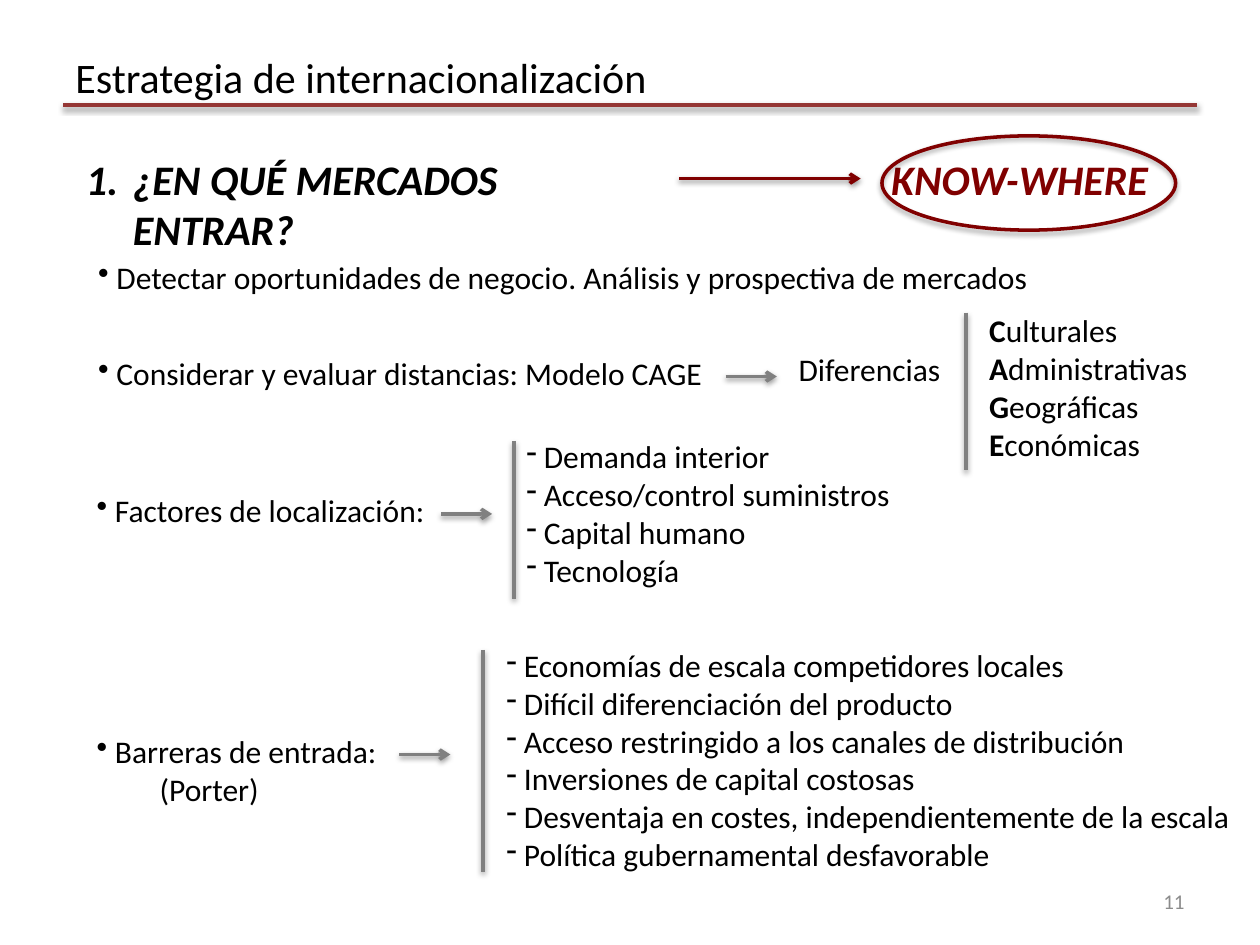
from pptx import Presentation
from pptx.dml.color import RGBColor
from pptx.enum.shapes import MSO_CONNECTOR, MSO_SHAPE
from pptx.enum.text import MSO_ANCHOR, PP_ALIGN
from pptx.oxml import parse_xml
from pptx.oxml.ns import nsdecls
from pptx.util import Cm, Pt

BLACK = RGBColor(0x00, 0x00, 0x00)
GREY = RGBColor(0x80, 0x80, 0x80)
PAGE_GREY = RGBColor(0x8C, 0x8C, 0x8C)
BRICK = RGBColor(0x95, 0x37, 0x35)
MAROON = RGBColor(0x80, 0x00, 0x00)
FONT = "Calibri"
ARROW_LENGTH = 1.03
ARROW_DROP = 0.58


def add_shadow(shape, opacity):
    shape._element.spPr.append(parse_xml(
        f'<a:effectLst {nsdecls("a")}>'
        '<a:outerShdw blurRad="39370" dist="20320" dir="5400000" rotWithShape="0">'
        f'<a:srgbClr val="000000"><a:alpha val="{opacity * 1000}"/></a:srgbClr>'
        '</a:outerShdw></a:effectLst>'))


def add_line(slide, x1, y1, x2, y2, color, arrow=False):
    line = slide.shapes.add_connector(
        MSO_CONNECTOR.STRAIGHT, Cm(x1), Cm(y1), Cm(x2), Cm(y2))
    line.line.color.rgb = color
    line.line.width = Pt(2)
    if arrow:
        line.line._get_or_add_ln().append(
            parse_xml(f'<a:tailEnd {nsdecls("a")} type="arrow"/>'))
    add_shadow(line, 38)


def add_text_box(slide, left, top, width, height, anchor=MSO_ANCHOR.TOP):
    frame = slide.shapes.add_textbox(
        Cm(left), Cm(top), Cm(width), Cm(height)).text_frame
    frame.word_wrap = True
    frame.vertical_anchor = anchor
    return frame


def add_run(paragraph, text, size=18, color=BLACK, bold=False, italic=False):
    run = paragraph.add_run()
    run.text = text
    font = run.font
    font.name, font.size, font.color.rgb = FONT, Pt(size), color
    font.bold, font.italic = bold, italic


def paragraphs(frame, count):
    """Yield the frame's first paragraph, then new ones up to count."""
    yield frame.paragraphs[0]
    for _ in range(count - 1):
        yield frame.add_paragraph()


def set_bullet(paragraph, char):
    paragraph._p.get_or_add_pPr().append(
        parse_xml(f'<a:buChar {nsdecls("a")} char="{char}"/>'))


def add_bullets(slide, left, top, width, height, char, items):
    frame = add_text_box(slide, left, top, width, height)
    for paragraph, item in zip(paragraphs(frame, len(items)), items):
        set_bullet(paragraph, char)
        add_run(paragraph, " " + item)
    return frame


def header(slide, left, top, width, height):
    add_line(slide, left, top + 1.36, left + width, top + 1.36, BRICK)
    title = add_text_box(slide, left, top, width, height, MSO_ANCHOR.MIDDLE)
    add_run(title.paragraphs[0], "Estrategia de internacionalización", 24)


def question(slide, left, top, width, height):
    """Numbered question on the left, arrow to its circled answer on the right."""
    asked = add_text_box(slide, left, top + 0.23, 12.19, 1.27).paragraphs[0]
    properties = asked._p.get_or_add_pPr()
    properties.set("marL", str(Cm(0.95)))
    properties.set("indent", str(Cm(-0.95)))
    properties.append(
        parse_xml(f'<a:buAutoNum {nsdecls("a")} type="arabicPeriod"/>'))
    add_run(asked, "¿EN QUÉ MERCADOS ENTRAR?", 24, bold=True, italic=True)

    oval_width = 5.92
    oval_left = left + width - oval_width
    answer = add_text_box(slide, oval_left - 0.84, top + 0.23, 7.42, 1.27).paragraphs[0]
    answer.alignment = PP_ALIGN.CENTER
    add_run(answer, "KNOW-WHERE ", 24, MAROON, bold=True, italic=True)
    oval = slide.shapes.add_shape(
        MSO_SHAPE.OVAL, Cm(oval_left), Cm(top), Cm(oval_width), Cm(height))
    oval.fill.background()
    oval.line.color.rgb = MAROON
    oval.line.width = Pt(2)
    add_shadow(oval, 35)
    add_line(slide, oval_left - 4.09, top + 0.86, oval_left - 0.43, top + 0.86,
             MAROON, arrow=True)


def pointed_topic(slide, left, top, width, topic, arrow_offset):
    """Bulleted topic followed by a short arrow on its first line."""
    frame = add_bullets(slide, left, top, width, 1.02, "•", [topic])
    start, y = left + arrow_offset, top + ARROW_DROP
    add_line(slide, start, y, start + ARROW_LENGTH, y, GREY, arrow=True)
    return frame


def cage_distances(slide, left, top, width, height):
    pointed_topic(slide, left, top + 0.86, 12.88,
                  "Considerar y evaluar distancias: Modelo CAGE", 12.9)
    differences = add_text_box(slide, left + 14.12, top + 0.78, 3.4, 1.02)
    add_run(differences.paragraphs[0], "Diferencias")
    add_line(slide, left + 17.74, top + 0.15, left + 17.74, top + height, GREY)
    kinds = ["Culturales", "Administrativas", "Geográficas", "Económicas"]
    frame = add_text_box(slide, left + 17.96, top, width - 17.96, height)
    for paragraph, kind in zip(paragraphs(frame, len(kinds)), kinds):
        add_run(paragraph, kind[0], bold=True)
        add_run(paragraph, kind[1:])


def barred_list(slide, left, top, width, height, bar_gap, bar_length, items):
    """Dashed list with a vertical bar standing bar_gap to the left of its box."""
    add_bullets(slide, left, top, width, height, "-", items)
    x, bar_top = left - bar_gap, top + 0.2
    add_line(slide, x, bar_top, x, bar_top + bar_length, GREY)


def location_factors(slide, left, top, width, height):
    pointed_topic(slide, left, top + 1.09, 7.42, "Factores de localización:", 7.19)
    barred_list(slide, left + 8.66, top, width - 8.66, height, 0, 3.18, [
        "Demanda interior",
        "Acceso/control suministros",
        "Capital humano",
        "Tecnología",
    ])


def entry_barriers(slide, left, top, width, height):
    topic = pointed_topic(slide, left, top + 1.73, 8.46, "Barreras de entrada:", 6.35)
    author = topic.add_paragraph()
    author._p.get_or_add_pPr().set("marL", str(Cm(1.27)))
    add_run(author, "(Porter)")
    barred_list(slide, left + 8.26, top, width - 8.26, height, 0.22, 4.47, [
        "Economías de escala competidores locales",
        "Difícil diferenciación del producto",
        "Acceso restringido a los canales de distribución",
        "Inversiones de capital costosas",
        "Desventaja en costes, independientemente de la escala",
        "Política gubernamental desfavorable",
    ])


def page_number(slide, left, top, width, height):
    frame = add_text_box(slide, left, top, width, height, MSO_ANCHOR.MIDDLE)
    frame.paragraphs[0].alignment = PP_ALIGN.RIGHT
    add_run(frame.paragraphs[0], "11", 12, PAGE_GREY)


def main():
    deck = Presentation()
    deck.slide_width, deck.slide_height = Cm(25.4), Cm(19.05)
    slide = deck.slides.add_slide(deck.slide_layouts[6])
    header(slide, 1.27, 0.76, 22.86, 1.57)
    question(slide, 1.48, 2.74, 22.22, 1.9)
    add_bullets(slide, 1.73, 5.08, 21.59, 1.02, "•", [
        "Detectar oportunidades de negocio. Análisis y prospectiva de mercados"])
    cage_distances(slide, 1.73, 6.15, 22.61, 3.33)
    location_factors(slide, 1.7, 8.69, 17.35, 4.11)
    entry_barriers(slide, 1.7, 12.9, 23.45, 4.88)
    page_number(slide, 18.21, 17.65, 5.92, 1.02)
    deck.save("out.pptx")


if __name__ == "__main__":
    main()
